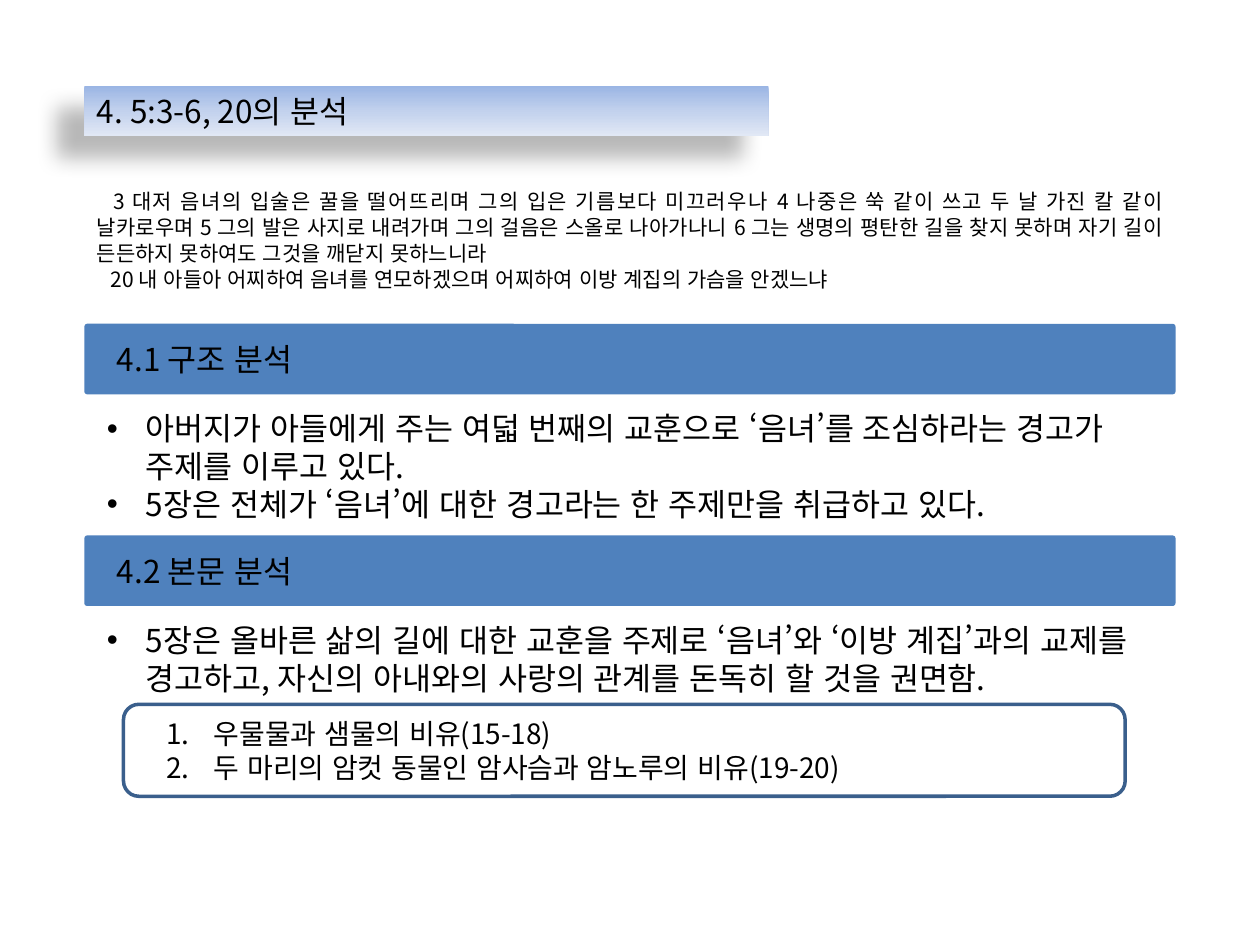
from lxml import etree
from pptx import Presentation
from pptx.dml.color import RGBColor
from pptx.enum.lang import MSO_LANGUAGE_ID
from pptx.enum.shapes import MSO_SHAPE
from pptx.enum.text import MSO_ANCHOR, PP_ALIGN
from pptx.oxml import parse_xml
from pptx.oxml.ns import qn
from pptx.util import Inches, Pt

RECT, ROUNDED = MSO_SHAPE.RECTANGLE, MSO_SHAPE.ROUNDED_RECTANGLE
TOP, MIDDLE = MSO_ANCHOR.TOP, MSO_ANCHOR.MIDDLE
LEFT, JUSTIFY = PP_ALIGN.LEFT, PP_ALIGN.JUSTIFY
KOREAN = MSO_LANGUAGE_ID.KOREAN
color = RGBColor.from_string
FONT = "Noto Sans CJK KR"
A_NS = 'xmlns:a="http://schemas.openxmlformats.org/drawingml/2006/main"'
BULLET = f'<a:buChar {A_NS} char="•"/>'
NUMBER = f'<a:buAutoNum {A_NS} type="arabicPeriod"/>'

prs = Presentation()
prs.slide_width, prs.slide_height = Inches(10), Inches(7.5)
slide = prs.slides.add_slide(prs.slide_layouts[6])


def add_box(kind, left, top, width, height):
    shape = slide.shapes.add_shape(
        kind, Inches(left), Inches(top), Inches(width), Inches(height))
    shape.shadow.inherit = False
    shape.line.fill.background()
    return shape


def write(frame, lines, size=18, align=LEFT, margin=0, indents=(0,),
          marker=None, anchor=TOP, inset=0.05, spacing=1.0):
    """Fill a frame; indents are first-line indents, cycled over the lines."""
    layout = {"word_wrap": True, "vertical_anchor": anchor,
              "margin_top": Inches(inset)}
    for key, value in layout.items():
        setattr(frame, key, value)
    for i, line in enumerate(lines):
        para = frame.paragraphs[0] if i == 0 else frame.add_paragraph()
        para.alignment = align
        para.line_spacing = spacing
        props = para._p.get_or_add_pPr()
        props.set("marL", str(Inches(margin)))
        props.set("indent", str(Inches(indents[i % len(indents)])))
        if marker:
            etree.SubElement(props, qn("a:buFont")).set("typeface", "Arial")
            props.append(parse_xml(marker))
        run = para.add_run()
        run.text = line
        text_format = {"size": Pt(size), "name": FONT, "language_id": KOREAN}
        for key, value in text_format.items():
            setattr(run.font, key, value)
        run.font.color.rgb = color("000000")
        east_asian = etree.SubElement(run._r.get_or_add_rPr(), qn("a:ea"))
        east_asian.set("typeface", FONT)


# Scripture passage
passage = slide.shapes.add_textbox(
    Inches(0.67), Inches(1.36), Inches(8.66), Inches(1.01))
write(passage.text_frame, [
    "3 대저 음녀의 입술은 꿀을 떨어뜨리며 그의 입은 기름보다 미끄러우나 4 나중은 쑥 같이 쓰고 "
    "두 날 가진 칼 같이 날카로우며 5 그의 발은 사지로 내려가며 그의 걸음은 스올로 나아가나니 "
    "6 그는 생명의 평탄한 길을 찾지 못하며 자기 길이 든든하지 못하여도 그것을 깨닫지 못하느니라",
    "20 내 아들아 어찌하여 음녀를 연모하겠으며 어찌하여 이방 계집의 가슴을 안겠느냐",
], size=12, align=JUSTIFY, indents=(0.13, 0.11), inset=0.13, spacing=1.03)

# Slide heading: gradient band with a soft shadow
heading = add_box(RECT, 0.67, 0.68, 5.43, 0.4)
stops = "".join(
    f'<a:gs pos="{pos * 1000}"><a:srgbClr val="{shade}"/></a:gs>'
    for pos, shade in ((0, "9AB5E4"), (50, "C2D1ED"), (100, "E1E8F5")))
gradient = parse_xml(
    f'<a:gradFill {A_NS} rotWithShape="1"><a:gsLst>{stops}</a:gsLst>'
    '<a:lin ang="5400000" scaled="0"/></a:gradFill>')
heading._element.spPr.find(qn("a:prstGeom")).addnext(gradient)
heading._element.spPr.find(qn("a:effectLst")).append(parse_xml(
    f'<a:outerShdw {A_NS} blurRad="{Pt(11.8)}" dist="{Pt(19.7)}" '
    f'dir="{141 * 60000}" algn="ctr" rotWithShape="0"><a:srgbClr val="000000">'
    '<a:alpha val="28000"/></a:srgbClr></a:outerShdw>'))
write(heading.text_frame, ["4. 5:3-6, 20의 분석"], anchor=MIDDLE)

# Sections: title bar with bullets below
sections = [
    (2.57, "4.1 구조 분석", 1.01, [
        "아버지가 아들에게 주는 여덟 번째의 교훈으로 ‘음녀’를 조심하라는 경고가 주제를 이루고 있다.",
        "5장은 전체가 ‘음녀’에 대한 경고라는 한 주제만을 취급하고 있다."]),
    (4.25, "4.2 본문 분석", 0.71, [
        "5장은 올바른 삶의 길에 대한 교훈을 주제로 ‘음녀’와 ‘이방 계집’과의 교제를 경고하고, "
        "자신의 아내와의 사랑의 관계를 돈독히 할 것을 권면함."]),
]
for top, title, height, points in sections:
    bar = add_box(ROUNDED, 0.67, top, 8.66, 0.56)
    bar.adjustments[0] = 0.04
    bar.fill.solid()
    bar.fill.fore_color.rgb = color("4F81BD")
    label = slide.shapes.add_textbox(
        Inches(0.83), Inches(top + 0.08), Inches(8.11), Inches(0.4))
    write(label.text_frame, [title])
    body = slide.shapes.add_textbox(
        Inches(0.75), Inches(top + 0.63), Inches(8.58), Inches(height))
    write(body.text_frame, points, margin=0.31, indents=(-0.31,), marker=BULLET)

# Outlined list of parables
frame = add_box(ROUNDED, 0.98, 5.59, 7.95, 0.73)
frame.fill.background()
frame.line.color.rgb = color("3A5F8C")
frame.line.width = Pt(2)
parables = slide.shapes.add_textbox(
    Inches(1.22), Inches(5.64), Inches(7.64), Inches(0.64))
write(parables.text_frame,
      ["우물물과 샘물의 비유(15-18)", "두 마리의 암컷 동물인 암사슴과 암노루의 비유(19-20)"],
      size=16, margin=0.38, indents=(-0.38,), marker=NUMBER)

prs.save("out.pptx")
